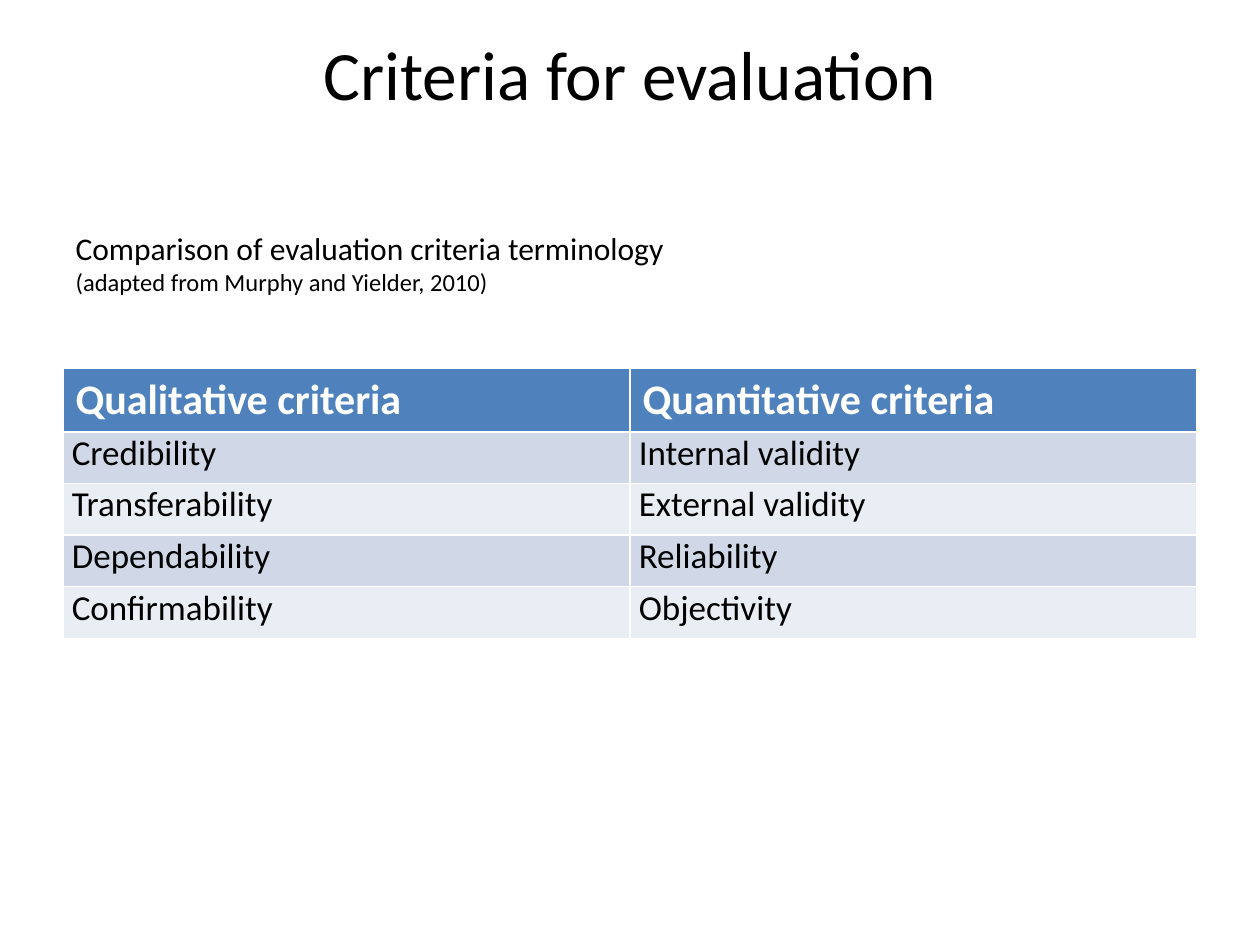
from pptx import Presentation
from pptx.dml.color import RGBColor
from pptx.enum.text import MSO_ANCHOR, PP_ALIGN
from pptx.util import Inches, Pt

BLACK = RGBColor(0x00, 0x00, 0x00)
WHITE = RGBColor(0xFF, 0xFF, 0xFF)
HEADER_BLUE = RGBColor(0x4F, 0x81, 0xBD)
BANDS = (RGBColor(0xD0, 0xD8, 0xE8), RGBColor(0xE9, 0xED, 0xF4))
FONT = "Calibri"
LEFT, CENTER = PP_ALIGN.LEFT, PP_ALIGN.CENTER
TOP, MIDDLE = MSO_ANCHOR.TOP, MSO_ANCHOR.MIDDLE
TITLE_ONLY = 5

MARGIN, CONTENT_WIDTH = 0.5, 9
HEADER_HEIGHT, ROW_HEIGHT = 0.49, 0.41
CRITERIA = [
    ("Qualitative criteria", "Quantitative criteria"),
    ("Credibility", "Internal validity"),
    ("Transferability", "External validity"),
    ("Dependability", "Reliability"),
    ("Confirmability", "Objectivity"),
]


def write(para, text, size, color=BLACK, bold=False, align=LEFT, spacing=0):
    para.alignment = align
    para.space_before = para.space_after = Pt(spacing)
    span = para.add_run()
    span.text = text
    span.font.name = FONT
    span.font.size = Pt(size)
    span.font.bold = bold
    span.font.color.rgb = color


def add_heading(page):
    box = page.shapes.add_textbox(
        Inches(MARGIN), Inches(0.25), Inches(CONTENT_WIDTH), Inches(1.3))
    frame = box.text_frame
    frame.word_wrap = True
    frame.vertical_anchor = TOP
    frame.margin_top = 0
    write(frame.paragraphs[0], "Criteria for evaluation", 39.6, align=CENTER)


def fill_title(page):
    title = page.shapes.title
    title.left, title.top = Inches(MARGIN), Inches(1.55)
    title.width, title.height = Inches(CONTENT_WIDTH), Inches(1.07)
    frame = title.text_frame
    frame.vertical_anchor = MIDDLE
    write(frame.paragraphs[0], "Comparison of evaluation criteria terminology", 18)
    write(frame.add_paragraph(), "(adapted from Murphy and Yielder, 2010)", 14)


def fill_header_cell(cell, text):
    cell.fill.solid()
    cell.fill.fore_color.rgb = HEADER_BLUE
    write(cell.text_frame.paragraphs[0], text, 24, color=WHITE, bold=True)


def fill_body_cell(cell, text, band):
    cell.fill.solid()
    cell.fill.fore_color.rgb = band
    cell.margin_left = cell.margin_right = Inches(0.07)
    cell.margin_top = cell.margin_bottom = 0
    write(cell.text_frame.paragraphs[0], text, 20, spacing=6)


def add_criteria_table(page):
    """Add the table; its default style supplies the white borders."""
    body_rows = len(CRITERIA) - 1
    height = HEADER_HEIGHT + body_rows * ROW_HEIGHT
    table = page.shapes.add_table(
        len(CRITERIA), len(CRITERIA[0]), Inches(MARGIN), Inches(2.92),
        Inches(CONTENT_WIDTH), Inches(height)).table
    for row_index, texts in enumerate(CRITERIA):
        is_header = row_index == 0
        table.rows[row_index].height = Inches(HEADER_HEIGHT if is_header else ROW_HEIGHT)
        for column_index, text in enumerate(texts):
            cell = table.cell(row_index, column_index)
            if is_header:
                fill_header_cell(cell, text)
            else:
                fill_body_cell(cell, text, BANDS[(row_index - 1) % 2])


def main():
    deck = Presentation()
    deck.slide_width, deck.slide_height = Inches(10), Inches(7.5)
    page = deck.slides.add_slide(deck.slide_layouts[TITLE_ONLY])
    fill_title(page)
    add_criteria_table(page)
    add_heading(page)
    deck.save("out.pptx")


if __name__ == "__main__":
    main()
